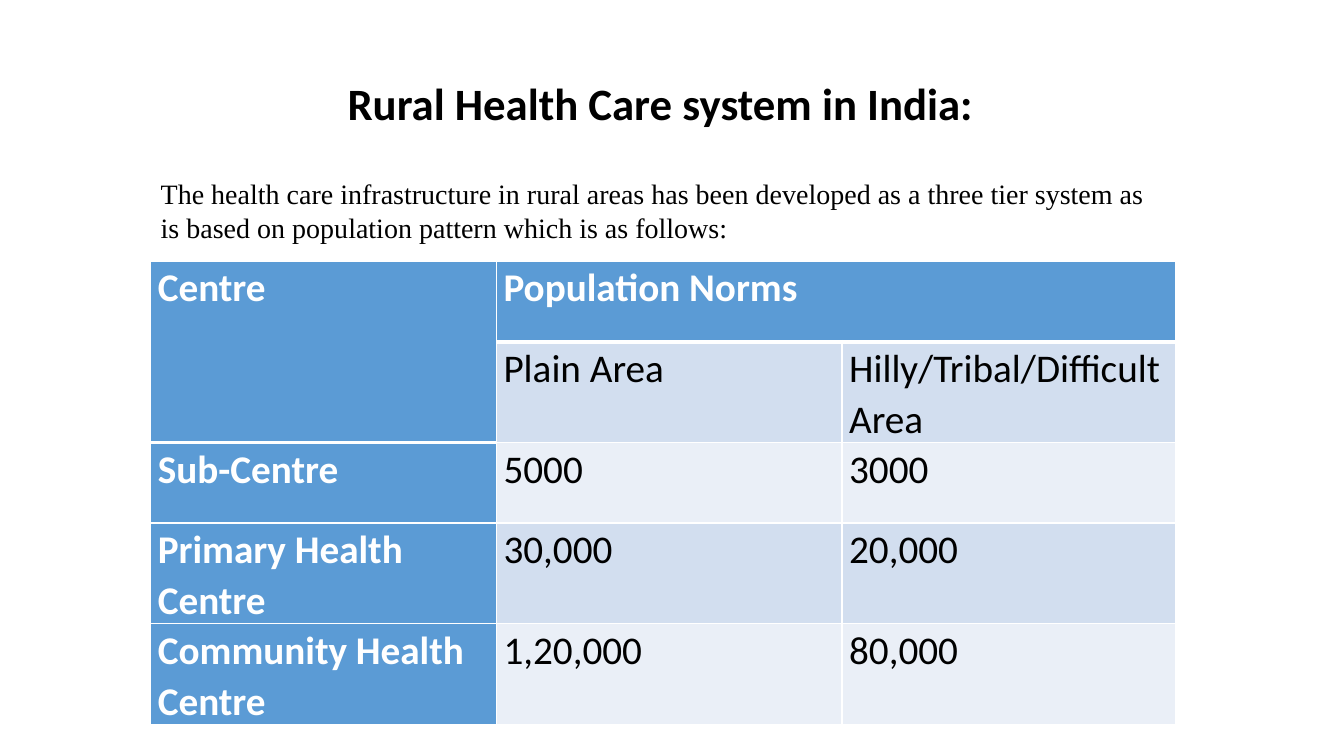
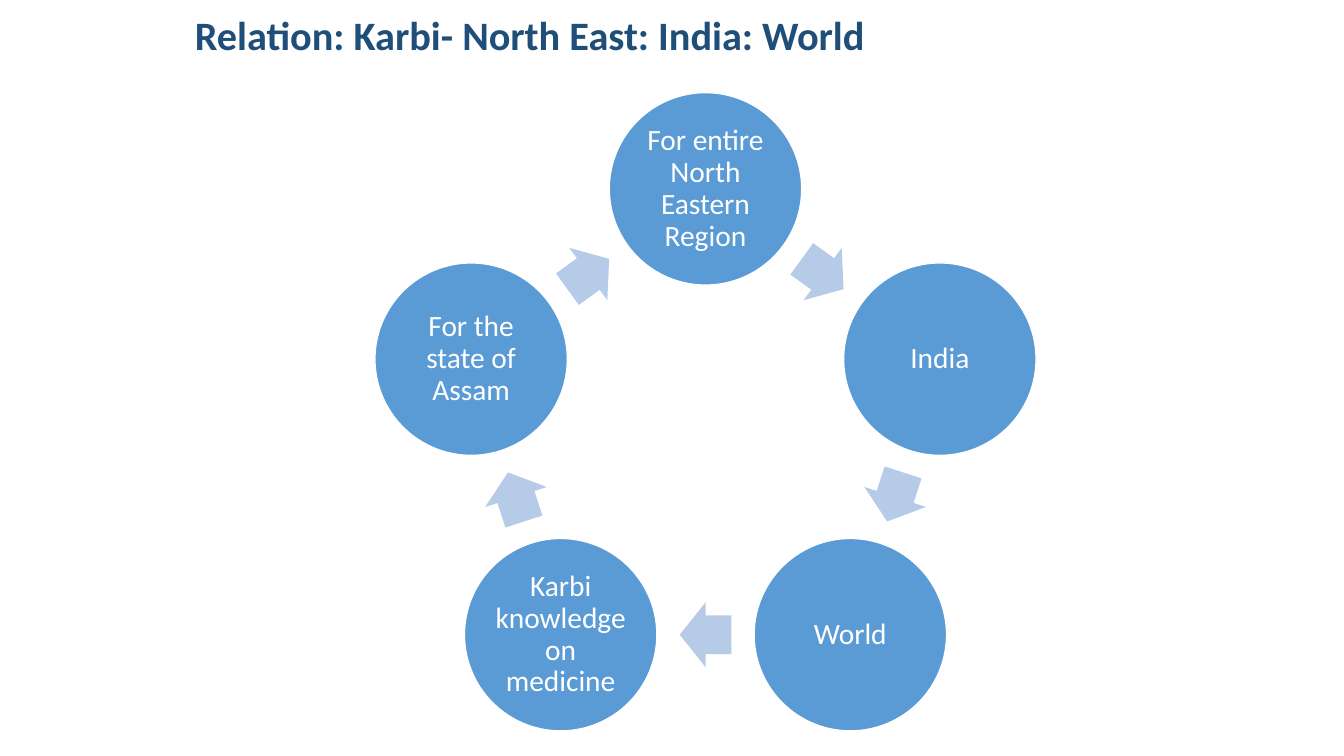
from math import cos, pi, sin

from lxml.etree import SubElement
from pptx import Presentation
from pptx.dml.color import RGBColor
from pptx.enum.shapes import MSO_SHAPE as Shape
from pptx.enum.text import MSO_ANCHOR as Anchor, PP_ALIGN as Align
from pptx.oxml.ns import qn
from pptx.util import Cm, Pt

COLORS = {
    "white": "FFFFFF",
    "black": "000000",
    "blue": "5B9BD5",
    "navy": "1F4E79",
    "arrow": "B5CBE7",
    "band_dark": "D2DEEF",
    "band_light": "EAEFF7",
}

NORMS = [
    ["Centre", "Population Norms", ""],
    ["", "Plain Area", "Hilly/Tribal/Difficult Area"],
    ["Sub-Centre", "5000", "3000"],
    ["Primary Health Centre", "30,000", "20,000"],
    ["Community Health Centre", "1,20,000", "80,000"],
]

CYCLE_STEPS = [
    "For entire North Eastern Region",
    "India",
    "World",
    "Karbi knowledge on medicine",
    "For the state of Assam",
]


def color(name):
    return RGBColor.from_string(COLORS[name])


def write_text(frame, text, size, font="Calibri", fill="black", bold=False,
               align=Align.LEFT, spacing=1.0):
    paragraph = frame.paragraphs[0]
    paragraph.alignment = align
    paragraph.line_spacing = spacing
    run = paragraph.add_run()
    run.text = text
    run.font.name = font
    run.font.size = Pt(size)
    run.font.bold = bold
    run.font.color.rgb = color(fill)


def add_text(slide, box, text, **text_format):
    frame = slide.shapes.add_textbox(*map(Cm, box)).text_frame
    frame.word_wrap = True
    frame.vertical_anchor = Anchor.MIDDLE
    write_text(frame, text, **text_format)


def add_title(slide, box, text, size, fill="black"):
    add_text(slide, box, text, size=size, fill=fill, bold=True, spacing=0.9)


def add_filled_shape(slide, kind, center, size, fill):
    (x, y), (width, height) = center, size
    shape = slide.shapes.add_shape(
        kind, Cm(x - width / 2), Cm(y - height / 2), Cm(width), Cm(height))
    shape.shadow.inherit = False
    shape.fill.solid()
    shape.fill.fore_color.rgb = color(fill)
    shape.line.fill.background()
    return shape


def set_borders(cell, bottom=1):
    """White cell borders; must run before the cell gets its fill."""
    properties = cell._tc.get_or_add_tcPr()
    for side, width in (("L", 1), ("R", 1), ("T", 1), ("B", bottom)):
        line = SubElement(properties, qn(f"a:ln{side}"), w=str(Pt(width)))
        fill = SubElement(line, qn("a:solidFill"))
        SubElement(fill, qn("a:srgbClr"), val=COLORS["white"])


def add_norms_table(slide, left, top, widths, row_height):
    table = slide.shapes.add_table(
        len(NORMS), len(widths), Cm(left), Cm(top),
        Cm(sum(widths)), Cm(row_height * len(NORMS))).table
    for column, width in zip(table.columns, widths):
        column.width = Cm(width)
    for row in table.rows:
        row.height = Cm(row_height)

    # Header cells span two rows or two columns
    table.cell(0, 0).merge(table.cell(1, 0))
    table.cell(0, 1).merge(table.cell(0, 2))

    for r, values in enumerate(NORMS):
        for c, value in enumerate(values):
            cell = table.cell(r, c)
            header = r == 0 or c == 0
            band = "band_dark" if r % 2 else "band_light"
            set_borders(cell, bottom=3 if r == 0 else 1)
            cell.fill.solid()
            cell.fill.fore_color.rgb = color("blue" if header else band)
            cell.margin_left = cell.margin_right = Cm(0.18)
            cell.margin_top = cell.margin_bottom = 0
            if value:
                write_text(cell.text_frame, value, size=28, bold=header,
                           fill="white" if header else "black", spacing=1.07)


def add_cycle(slide, center, radius, diameter, arrow_size):
    """Circles on a ring, clockwise from the top, with arrows between them."""
    step = 2 * pi / len(CYCLE_STEPS)

    def ring_point(angle, distance):
        return (center[0] + distance * sin(angle),
                center[1] - distance * cos(angle))

    for i, text in enumerate(CYCLE_STEPS):
        # Circle with its label; no side margins, so the longest word fits
        circle = add_filled_shape(slide, Shape.OVAL,
                                  ring_point(i * step, radius),
                                  (diameter, diameter), "blue")
        circle.line.color.rgb = color("white")
        circle.line.width = Pt(1)
        frame = circle.text_frame
        frame.word_wrap = True
        frame.vertical_anchor = Anchor.MIDDLE
        frame.margin_left = frame.margin_right = 0
        frame.margin_top = frame.margin_bottom = Cm(0.08)
        write_text(frame, text, size=21, fill="white", align=Align.CENTER,
                   spacing=0.9)

        # Arrow halfway to the next circle
        arrow = add_filled_shape(
            slide, Shape.RIGHT_ARROW,
            ring_point((i + 0.5) * step, radius * cos(step / 2)),
            arrow_size, "arrow")
        arrow.adjustments[0] = 0.6
        arrow.adjustments[1] = 0.5
        arrow.rotation = 360 * (i + 0.5) / len(CYCLE_STEPS)


def build_norms_slide(slide):
    add_title(slide, (8.51, 1.33, 20.24, 2.67),
              "Rural Health Care system in India:", size=32)
    add_norms_table(slide, 3.8, 6.58, (8.71, 8.71, 8.41), 2.03)
    add_text(slide, (3.8, 4.32, 25.45, 1.96),
             "The health care infrastructure in rural areas has been developed "
             "as a three tier system as is based on population pattern which "
             "is as follows:", size=20, font="Times New Roman")


def build_cycle_slide(slide):
    add_title(slide, (4.66, 0.41, 24.56, 1.07),
              "Relation: Karbi- North East: India: World",
              size=28.8, fill="navy")
    add_cycle(slide, center=(17.78, 10.97), radius=6.21, diameter=4.85,
              arrow_size=(1.3, 1.63))


def main():
    presentation = Presentation()
    presentation.slide_width = Cm(33.87)
    presentation.slide_height = Cm(19.05)
    blank = presentation.slide_layouts[6]
    for build in (build_norms_slide, build_cycle_slide):
        build(presentation.slides.add_slide(blank))
    presentation.save("out.pptx")


if __name__ == "__main__":
    main()
